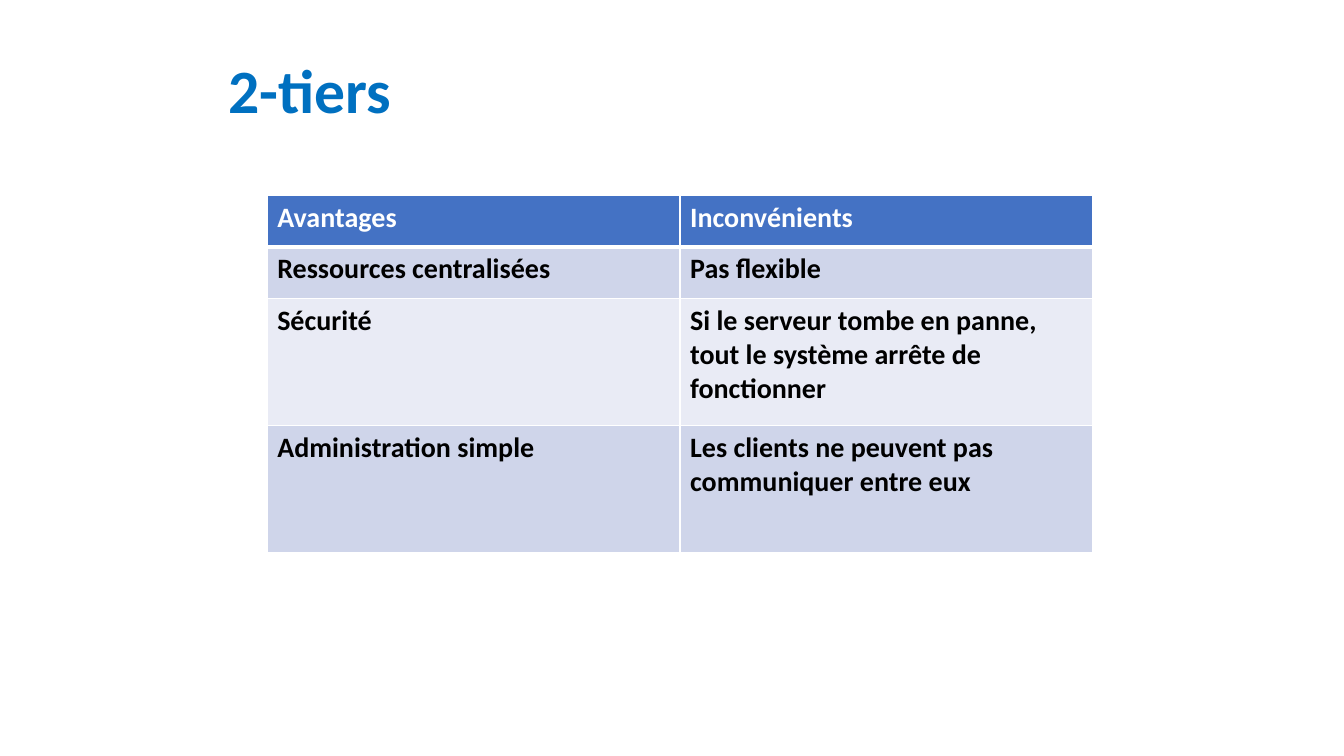
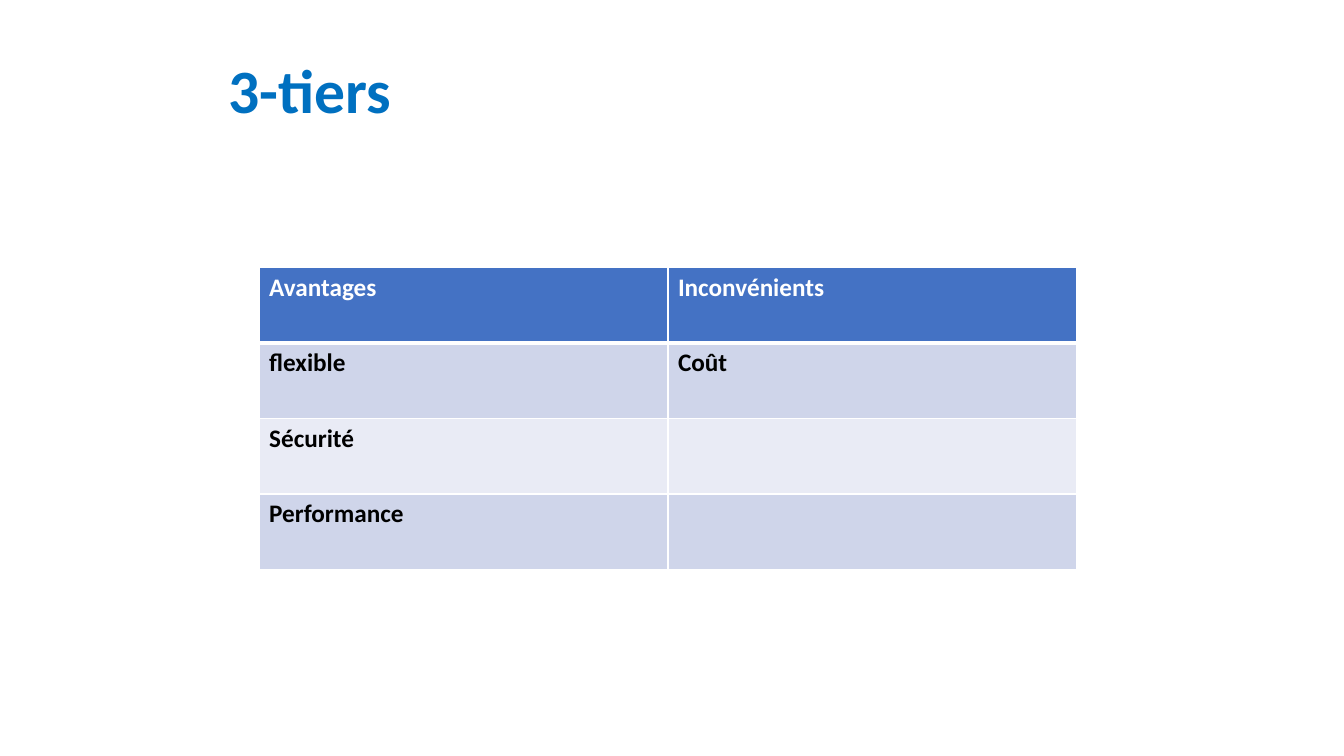
from lxml.etree import SubElement
from pptx import Presentation
from pptx.dml.color import RGBColor as RGB
from pptx.enum.text import MSO_ANCHOR as ANCHOR
from pptx.oxml.ns import qn
from pptx.util import Emu, Pt

PX = 9144
FONT = "Calibri"
COLORS = {
    "title": "0070C0",
    "header": "4472C4",
    "header_text": "FFFFFF",
    "body_text": "000000",
    "band_dark": "CFD5EA",
    "band_light": "E9EBF5",
    "border": "FFFFFF",
}
TITLE_BOX = (217, 30, 900, 125)
HEADERS = ("Avantages", "Inconvénients")
SLIDES = [
    {
        "title": "2-tiers",
        "box": (265, 194, 819, 354),
        "heights": (51, 51, 126, 126),
        "size": 20,
        "rows": [
            ("Ressources centralisées", "Pas flexible"),
            ("Sécurité", "Si le serveur tombe en panne, tout le système arrête de fonctionner"),
            ("Administration simple", "Les clients ne peuvent pas communiquer entre eux"),
        ],
    },
    {
        "title": "3-tiers",
        "box": (257, 265, 811, 300),
        "heights": (75, 75, 75, 75),
        "size": 18,
        "rows": [("flexible", "Coût"), ("Sécurité", ""), ("Performance", "")],
    },
]


def px(n):
    return Emu(round(n * PX))


def color(name):
    return RGB.from_string(COLORS[name])


def add_run(p, text, size, name):
    r = p.add_run()
    r.text = text
    r.font.name = FONT
    r.font.size = Pt(size)
    r.font.bold = True
    r.font.color.rgb = color(name)


def add_title(slide, box, text):
    sp = slide.shapes.add_textbox(*map(px, box))
    tf = sp.text_frame
    tf.word_wrap = True
    tf.vertical_anchor = ANCHOR.MIDDLE
    p = tf.paragraphs[0]
    p.line_spacing = 0.9
    add_run(p, text, 44, "title")


def set_borders(cell, bottom):
    tc_pr = cell._tc.get_or_add_tcPr()
    for side, width in (("L", 1), ("R", 1), ("T", 1), ("B", bottom)):
        ln = SubElement(tc_pr, qn(f"a:ln{side}"), w=str(Pt(width)))
        fill = SubElement(ln, qn("a:solidFill"))
        SubElement(fill, qn("a:srgbClr"), val=COLORS["border"])


def fill_cell(cell, text, size, row):
    header = row == 0
    set_borders(cell, 3 if header else 1)
    cell.fill.solid()
    band = "band_dark" if row % 2 else "band_light"
    cell.fill.fore_color.rgb = color("header" if header else band)
    if text:
        p = cell.text_frame.paragraphs[0]
        add_run(p, text, size, "header_text" if header else "body_text")


def add_comparison(slide, box, heights, size, rows):
    rows = [HEADERS, *rows]
    table = slide.shapes.add_table(len(rows), len(HEADERS), *map(px, box)).table
    for col in table.columns:
        col.width = px(box[2] / len(HEADERS))
    for i, (texts, height) in enumerate(zip(rows, heights)):
        table.rows[i].height = px(height)
        for j, text in enumerate(texts):
            fill_cell(table.cell(i, j), text, size, i)


def main():
    prs = Presentation()
    prs.slide_width, prs.slide_height = px(1333), px(750)
    for data in SLIDES:
        slide = prs.slides.add_slide(prs.slide_layouts[6])
        add_comparison(slide, data["box"], data["heights"], data["size"], data["rows"])
        add_title(slide, TITLE_BOX, data["title"])
    prs.save("out.pptx")


if __name__ == "__main__":
    main()
